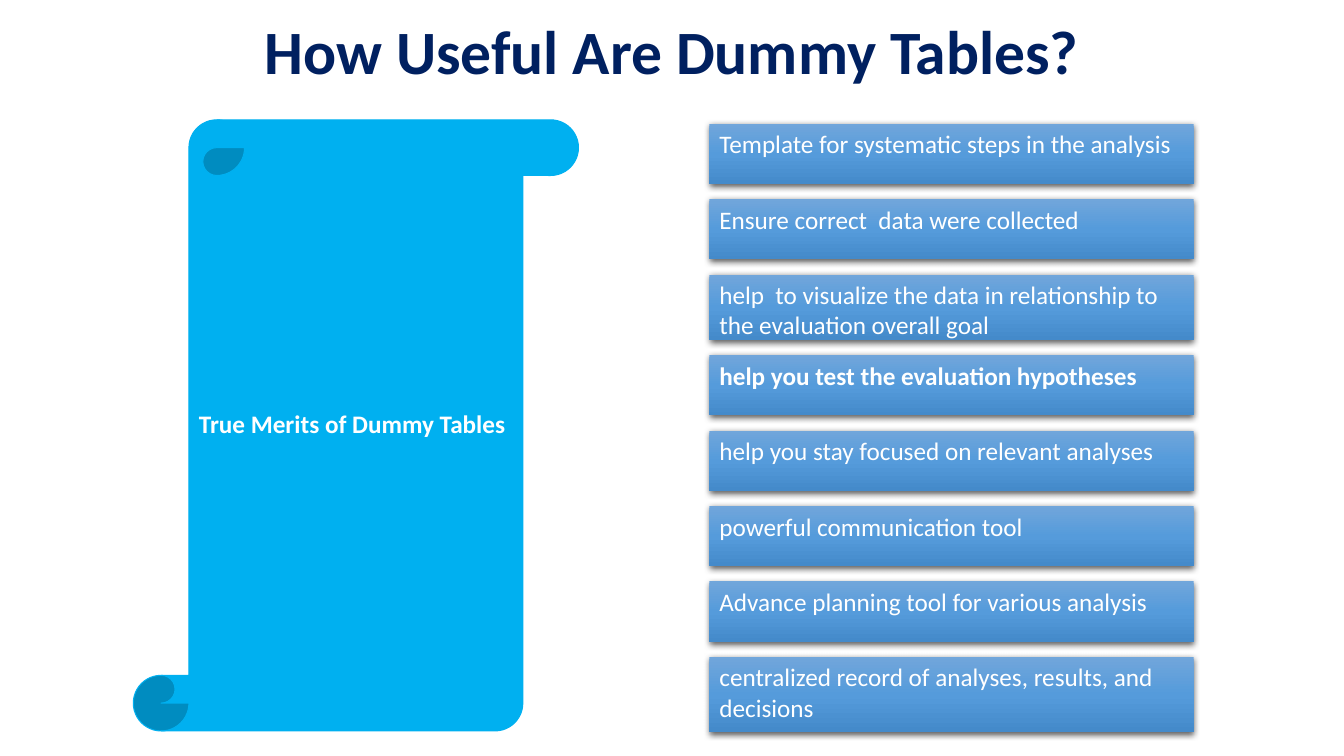
from pptx import Presentation
from pptx.dml.color import RGBColor
from pptx.enum.shapes import MSO_SHAPE
from pptx.enum.text import MSO_ANCHOR, MSO_AUTO_SIZE, PP_ALIGN
from pptx.oxml import parse_xml
from pptx.util import Cm, Pt

RECTANGLE = MSO_SHAPE.RECTANGLE
SCROLL = MSO_SHAPE.VERTICAL_SCROLL
TOP, MIDDLE = MSO_ANCHOR.TOP, MSO_ANCHOR.MIDDLE
NO_AUTOFIT = MSO_AUTO_SIZE.NONE
LEFT, CENTER = PP_ALIGN.LEFT, PP_ALIGN.CENTER

NAMESPACE = 'xmlns:a="http://schemas.openxmlformats.org/drawingml/2006/main"'
BLUE_STOPS = [(0, "71A6DB"), (50, "559BDB"), (100, "448ACA")]
BOX_LEFT, BOX_TOP, BOX_WIDTH, BOX_GAP = 17.88, 3.12, 12.2, 0.38
MERITS = [
    ("Template for systematic steps in the analysis", 1.52, False),
    ("Ensure correct  data were collected", 1.52, False),
    ("help  to visualize the data in relationship to the evaluation overall goal", 1.65, False),
    ("help you test the evaluation hypotheses", 1.52, True),
    ("help you stay focused on relevant analyses", 1.52, False),
    ("powerful communication tool", 1.52, False),
    ("Advance planning tool for various analysis", 1.52, False),
    ("centralized record of analyses, results, and decisions", 1.9, False),
]


def color(value):
    return RGBColor.from_string(value)


def apply(target, values):
    for name, value in values.items():
        setattr(target, name, value)


def write_text(shape, text, font, paragraph, frame):
    apply(shape.text_frame, {"word_wrap": True, "auto_size": NO_AUTOFIT, **frame})
    para = shape.text_frame.paragraphs[0]
    apply(para, paragraph)
    span = para.add_run()
    span.text = text
    font = {"name": "Calibri", "size": Pt(18), "color": "FFFFFF", **font}
    span.font.color.rgb = color(font.pop("color"))
    apply(span.font, font)


def add_title(page, text):
    title = page.shapes.title
    apply(title, {"left": Cm(2.34), "top": Cm(0.64), "width": Cm(29.2), "height": Cm(1.45)})
    write_text(title, text, {"size": Pt(44), "bold": True, "color": "002060"},
               {"alignment": CENTER, "line_spacing": 0.9}, {"vertical_anchor": MIDDLE})


def add_gradient_and_shadow(box):
    stops = "".join(
        f'<a:gs pos="{position * 1000}"><a:srgbClr val="{value}"/></a:gs>'
        for position, value in BLUE_STOPS)
    properties = box.fill._xPr
    properties.append(parse_xml(
        f'<a:gradFill {NAMESPACE} rotWithShape="1"><a:gsLst>{stops}</a:gsLst>'
        '<a:lin ang="5400000" scaled="0"/></a:gradFill>'))
    box.line.fill.background()
    properties.append(parse_xml(
        f'<a:effectLst {NAMESPACE}><a:outerShdw blurRad="57150" dist="19050" dir="5400000" '
        'algn="ctr" rotWithShape="0"><a:srgbClr val="000000"><a:alpha val="63000"/>'
        '</a:srgbClr></a:outerShdw></a:effectLst>'))


def add_merits(page):
    group = page.shapes.add_group_shape()
    top = BOX_TOP
    for text, height, bold in MERITS:
        box = group.shapes.add_shape(RECTANGLE, Cm(BOX_LEFT), Cm(top), Cm(BOX_WIDTH), Cm(height))
        add_gradient_and_shadow(box)
        write_text(box, text, {"bold": bold}, {"alignment": LEFT}, {"vertical_anchor": TOP})
        top += height + BOX_GAP


def add_scroll(page, text):
    scroll = page.shapes.add_shape(SCROLL, Cm(3.36), Cm(3.02), Cm(11.22), Cm(15.4))
    scroll.shadow.inherit = False
    scroll.fill.solid()
    scroll.fill.fore_color.rgb = color("00B0F0")
    scroll.line.color.rgb = color("00B0F0")
    scroll.line.width = Pt(0.75)
    write_text(scroll, text, {"bold": True}, {"alignment": LEFT},
               {"vertical_anchor": MIDDLE, "margin_bottom": Cm(0.95)})


def main():
    deck = Presentation()
    apply(deck, {"slide_width": Cm(33.87), "slide_height": Cm(19.05)})
    page = deck.slides.add_slide(deck.slide_layouts[5])
    add_title(page, "How Useful Are Dummy Tables?")
    add_merits(page)
    add_scroll(page, "True Merits of Dummy Tables")
    deck.save("out.pptx")


if __name__ == "__main__":
    main()
